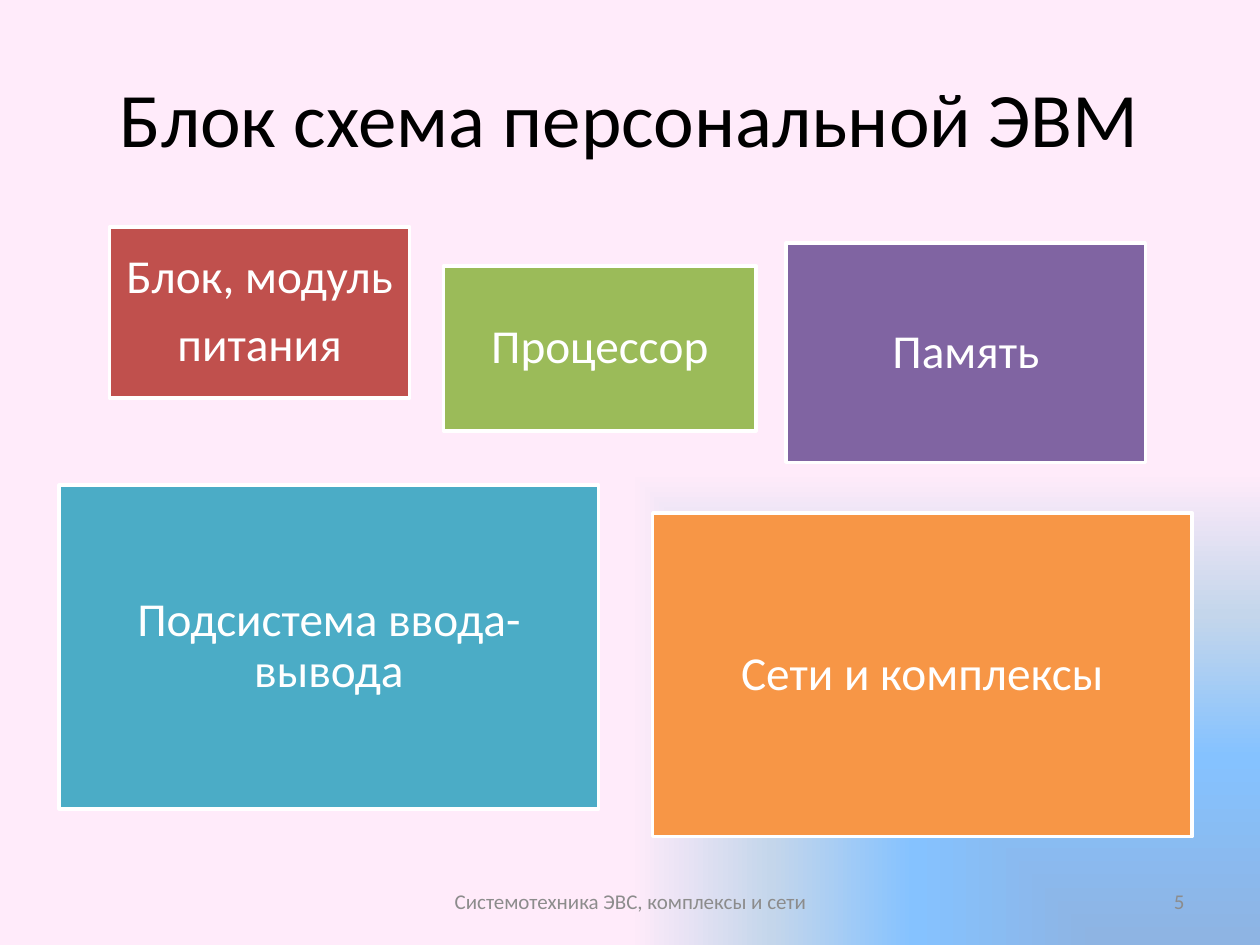
"""Build the slide with the block diagram of a personal computer."""
import dataclasses

import pptx
import pptx.dml.color
import pptx.enum.shapes
import pptx.enum.text
import pptx.oxml
import pptx.oxml.ns
import pptx.util

ALIGN = pptx.enum.text.PP_ALIGN


@dataclasses.dataclass(frozen=True)
class Theme:
    """Colours, type sizes and grid of the slide."""
    font: str = "Calibri"
    title_size: int = 44
    block_size: int = 27
    footer_size: int = 12
    block_inset: float = 0.11
    paragraph_gap: float = 9.5
    black: str = "000000"
    white: str = "FFFFFF"
    grey: str = "8C8C8C"
    red: str = "C0504D"
    green: str = "9BBB59"
    purple: str = "8064A2"
    aqua: str = "4BACC6"
    orange: str = "F79646"
    gradient: tuple = ((1, "8EB4E3", 34), (40, "85C2FF", 100),
                       (70, "C4D6EB", 100), (100, "FFEBFA", 100))
    columns: int = 100
    rows: int = 75
    cell: float = 0.1


THEME = Theme()
BLOCKS = (
    ("Блок, модуль\nпитания", THEME.red, (8.7, 18, 23.8, 13.6)),
    ("Процессор", THEME.green, (35.2, 21.1, 24.8, 13.1)),
    ("Память", THEME.purple, (62.4, 19.3, 28.5, 17.4)),
    ("Подсистема ввода-вывода", THEME.aqua, (4.7, 38.5, 42.8, 25.7)),
    ("Сети и комплексы", THEME.orange, (51.8, 40.7, 42.8, 25.7)),
)
FOOTERS = (
    ("Системотехника ЭВС, комплексы и сети", ALIGN.CENTER, (34.2, 69.5, 31.7, 4)),
    ("5", ALIGN.RIGHT, (71.7, 69.5, 23.3, 4)),
)


def grid(*cells):
    """Turn counts of grid columns or rows into lengths."""
    return [pptx.util.Inches(count * THEME.cell) for count in cells]


def colour(code):
    """Return the colour object of a hexadecimal code."""
    return pptx.dml.color.RGBColor.from_string(code)


def write_text(shape, text, *, size, code, align=ALIGN.CENTER,
               inset=None, line_spacing=None, gap=None):
    """Write text into a shape, one paragraph per line, and format it."""
    frame = shape.text_frame
    frame.text = text
    frame.word_wrap = True
    frame.vertical_anchor = pptx.enum.text.MSO_ANCHOR.MIDDLE
    if inset is not None:
        frame.margin_left = frame.margin_right = pptx.util.Inches(inset)
        frame.margin_top = frame.margin_bottom = pptx.util.Inches(inset)
    for paragraph in frame.paragraphs:
        paragraph.alignment = align
        if line_spacing is not None:
            paragraph.line_spacing = line_spacing
        if gap is not None:
            paragraph.space_after = pptx.util.Pt(gap)
        for run in paragraph.runs:
            run.font.name = THEME.font
            run.font.size = pptx.util.Pt(size)
            run.font.color.rgb = colour(code)


def paint_background(slide):
    """Fill the background with a gradient centred on the bottom right corner."""
    stops = "".join(
        f'<a:gs pos="{position * 1000}"><a:srgbClr val="{code}">'
        f'<a:alpha val="{alpha * 1000}"/></a:srgbClr></a:gs>'
        for position, code, alpha in THEME.gradient)
    gradient = pptx.oxml.parse_xml(
        f'<a:gradFill {pptx.oxml.ns.nsdecls("a")} rotWithShape="1">'
        f'<a:gsLst>{stops}</a:gsLst>'
        '<a:path path="rect"><a:fillToRect l="100000" t="100000"/></a:path>'
        '</a:gradFill>')
    slide.background.fill.solid()
    solid = slide.element.find(".//" + pptx.oxml.ns.qn("a:solidFill"))
    solid.getparent().replace(solid, gradient)


def add_title(slide, text):
    """Place and write the title placeholder."""
    title = slide.shapes.title
    title.left, title.top, title.width, title.height = grid(5, 3, 90, 12.5)
    write_text(title, text, size=THEME.title_size, code=THEME.black)


def add_block(slide, text, fill, place):
    """Add one filled block with a white outline."""
    block = slide.shapes.add_shape(
        pptx.enum.shapes.MSO_SHAPE.RECTANGLE, *grid(*place))
    block.shadow.inherit = False
    block.fill.solid()
    block.fill.fore_color.rgb = colour(fill)
    block.line.color.rgb = colour(THEME.white)
    block.line.width = pptx.util.Pt(2)
    write_text(block, text, size=THEME.block_size, code=THEME.white,
               inset=THEME.block_inset, line_spacing=0.9,
               gap=THEME.paragraph_gap)


def add_footer(slide, text, align, place):
    """Add one text box of the footer row."""
    box = slide.shapes.add_textbox(*grid(*place))
    write_text(box, text, size=THEME.footer_size, code=THEME.grey, align=align)


def main():
    """Build and save the presentation."""
    presentation = pptx.Presentation()
    presentation.slide_width, presentation.slide_height = grid(
        THEME.columns, THEME.rows)
    slide = presentation.slides.add_slide(presentation.slide_layouts[5])
    paint_background(slide)
    add_title(slide, "Блок схема персональной ЭВМ")
    for block in BLOCKS:
        add_block(slide, *block)
    for footer in FOOTERS:
        add_footer(slide, *footer)
    presentation.save("out.pptx")


if __name__ == "__main__":
    main()
